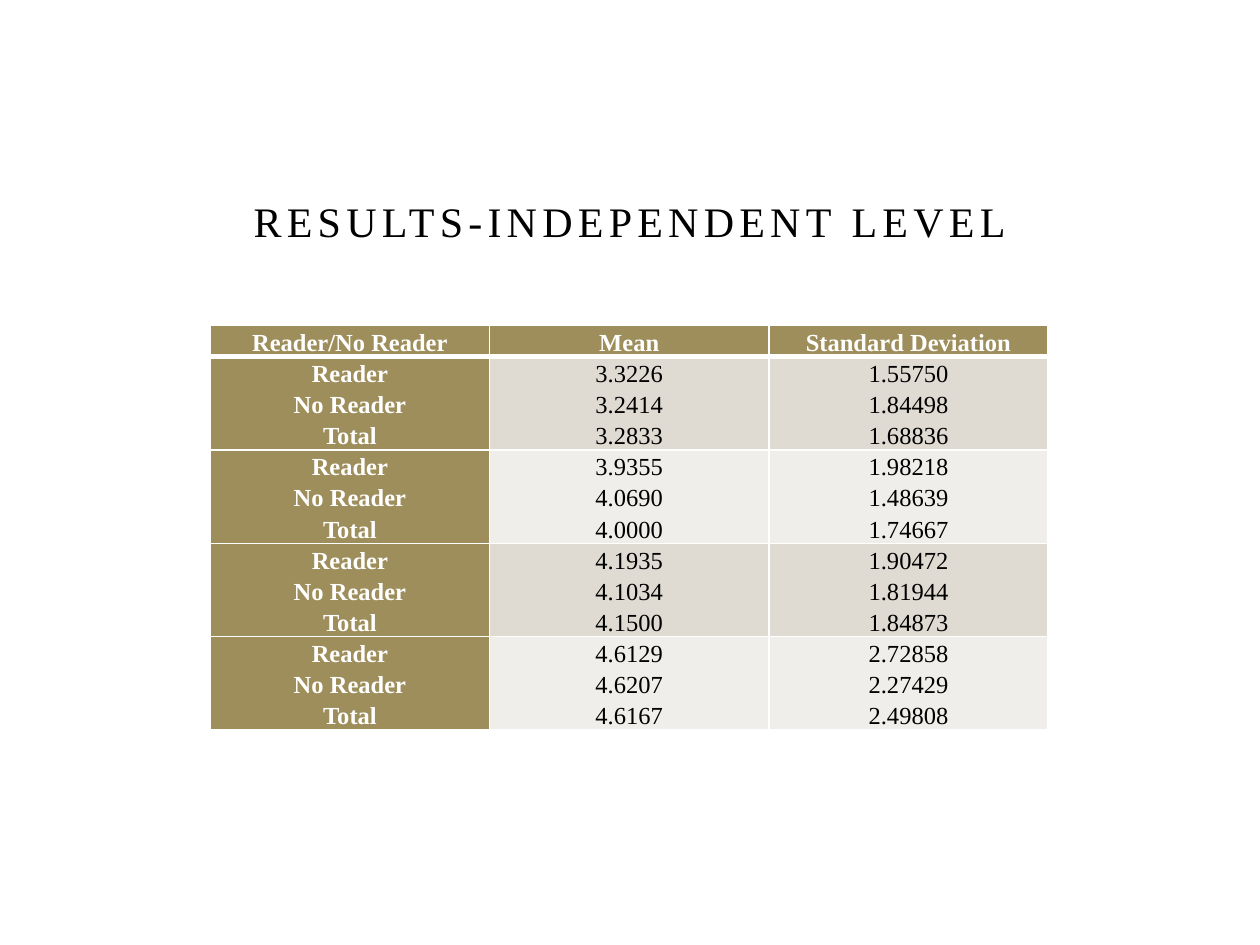
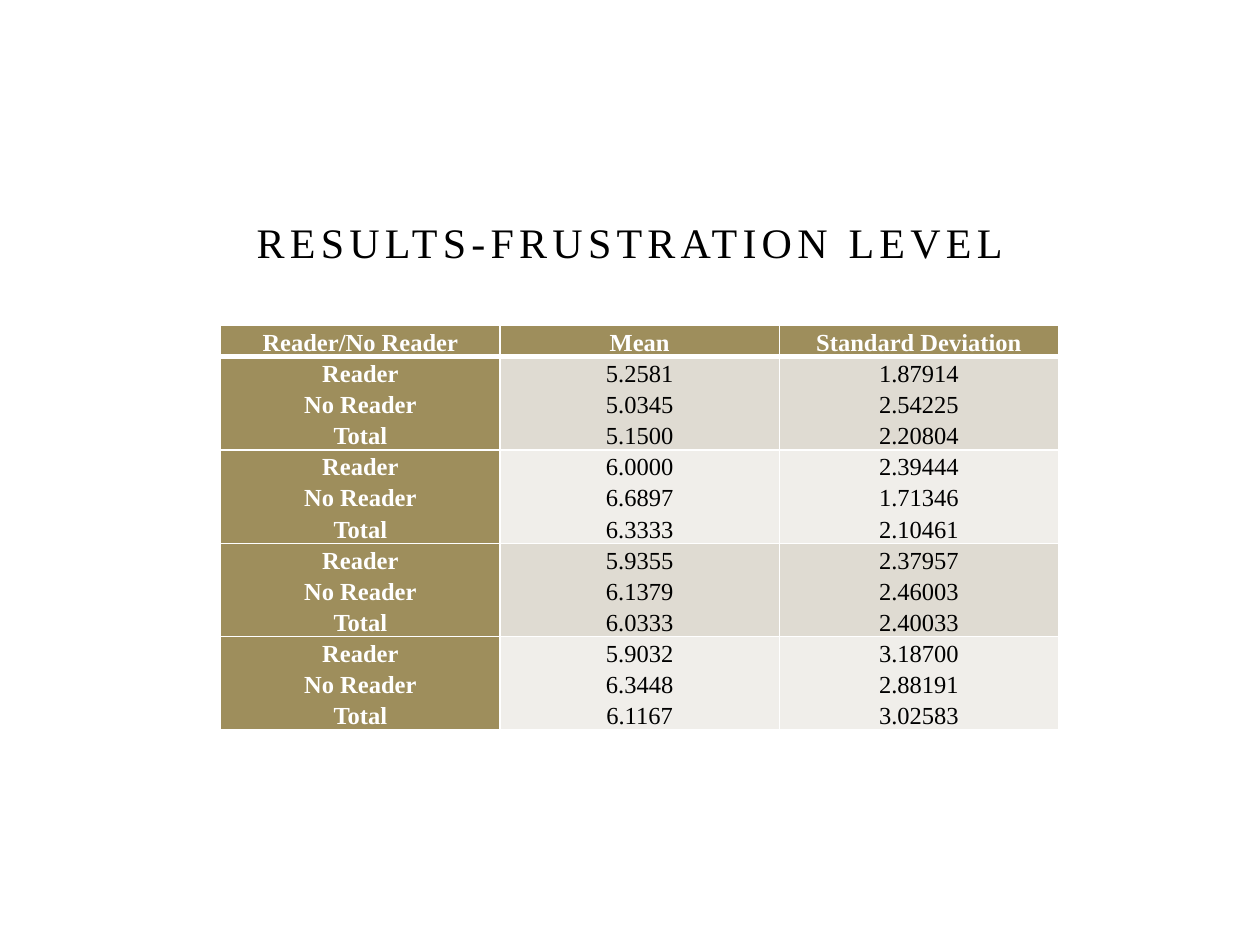
from lxml import etree
from pptx import Presentation
from pptx.dml.color import RGBColor
from pptx.enum.text import MSO_ANCHOR, PP_ALIGN
from pptx.oxml.ns import qn
from pptx.util import Cm, Pt

BLACK = RGBColor(0x00, 0x00, 0x00)
WHITE = RGBColor(0xFF, 0xFF, 0xFF)
OLIVE = RGBColor(0x9E, 0x8E, 0x5C)
BANDS = (RGBColor(0xDF, 0xDB, 0xD2), RGBColor(0xF0, 0xEE, 0xEA))
FONT = "Times New Roman"
TITLE_ONLY = 5

HEADERS = ("Reader/No Reader", "Mean", "Standard Deviation")
GROUPS = ("Reader", "No Reader", "Total")
COLUMN_WIDTH = Cm(5.63)
HEADER_HEIGHT = Cm(0.63)
ROW_HEIGHT = Cm(1.88)
TABLE_TOP = Cm(6.56)

# Each table row pairs the means with the standard deviations of the groups.
INDEPENDENT = (
    (("3.3226", "3.2414", "3.2833"), ("1.55750", "1.84498", "1.68836")),
    (("3.9355", "4.0690", "4.0000"), ("1.98218", "1.48639", "1.74667")),
    (("4.1935", "4.1034", "4.1500"), ("1.90472", "1.81944", "1.84873")),
    (("4.6129", "4.6207", "4.6167"), ("2.72858", "2.27429", "2.49808")),
)
FRUSTRATION = (
    (("5.2581", "5.0345", "5.1500"), ("1.87914", "2.54225", "2.20804")),
    (("6.0000", "6.6897", "6.3333"), ("2.39444", "1.71346", "2.10461")),
    (("5.9355", "6.1379", "6.0333"), ("2.37957", "2.46003", "2.40033")),
    (("5.9032", "6.3448", "6.1167"), ("3.18700", "2.88191", "3.02583")),
)


def style_font(font, size, color, bold=False):
    font.name = FONT
    font.size = Pt(size)
    font.bold = bold
    font.color.rgb = color


def add_title(slide, text, height):
    title = slide.shapes.title
    title.left, title.top, title.width, title.height = Cm(3.81), Cm(3.61), Cm(17.78), height
    frame = title.text_frame
    frame.text = text
    frame.vertical_anchor = MSO_ANCHOR.BOTTOM
    frame.margin_top = frame.margin_bottom = Cm(0.13)
    paragraph = frame.paragraphs[0]
    paragraph.alignment = PP_ALIGN.CENTER
    run = paragraph.runs[0]
    style_font(run.font, 24, BLACK)
    run.font._element.set("spc", "300")


def set_borders(cell, **widths):
    """Draw white borders; widths maps L, R, T and B to points."""
    properties = cell._tc.get_or_add_tcPr()
    for side, width in widths.items():
        line = etree.SubElement(properties, qn(f"a:ln{side}"), w=str(Pt(width)))
        fill = etree.SubElement(line, qn("a:solidFill"))
        etree.SubElement(fill, qn("a:srgbClr"), val=str(WHITE))


def fill_cell(cell, lines, fill, color, bold):
    cell.margin_left = cell.margin_right = Cm(0.18)
    cell.margin_top = cell.margin_bottom = 0
    cell.fill.solid()
    cell.fill.fore_color.rgb = fill
    cell.text_frame.text = "\n".join(lines)
    for paragraph in cell.text_frame.paragraphs:
        paragraph.alignment = PP_ALIGN.CENTER
        paragraph.line_spacing = 1.15
        style_font(paragraph.runs[0].font, 14, color, bold)


def add_results_table(slide, left, results):
    rows = [[(header,) for header in HEADERS]]
    rows += [(GROUPS, means, deviations) for means, deviations in results]
    height = HEADER_HEIGHT + ROW_HEIGHT * len(results)
    table = slide.shapes.add_table(
        len(rows), len(HEADERS), left, TABLE_TOP, COLUMN_WIDTH * len(HEADERS), height
    ).table
    for column in table.columns:
        column.width = COLUMN_WIDTH
    for row_index, row in enumerate(rows):
        table.rows[row_index].height = ROW_HEIGHT if row_index else HEADER_HEIGHT
        for column_index, lines in enumerate(row):
            cell = table.cell(row_index, column_index)
            is_heading = row_index == 0 or column_index == 0
            set_borders(cell, L=1, R=1, T=3 if row_index == 1 else 1,
                        B=3 if row_index == 0 else 1)
            fill_cell(
                cell,
                lines,
                fill=OLIVE if is_heading else BANDS[(row_index - 1) % 2],
                color=WHITE if is_heading else BLACK,
                bold=is_heading,
            )


def add_results_slide(presentation, title, title_height, table_left, results):
    slide = presentation.slides.add_slide(presentation.slide_layouts[TITLE_ONLY])
    add_title(slide, title, title_height)
    add_results_table(slide, table_left, results)


def main():
    presentation = Presentation()
    presentation.slide_width = Cm(25.4)
    presentation.slide_height = Cm(19.05)
    add_results_slide(presentation, "RESULTS-INDEPENDENT LEVEL", Cm(1.47), Cm(4.24), INDEPENDENT)
    add_results_slide(presentation, "RESULTS-FRUSTRATION LEVEL", Cm(1.9), Cm(4.45), FRUSTRATION)
    presentation.save("out.pptx")


if __name__ == "__main__":
    main()
